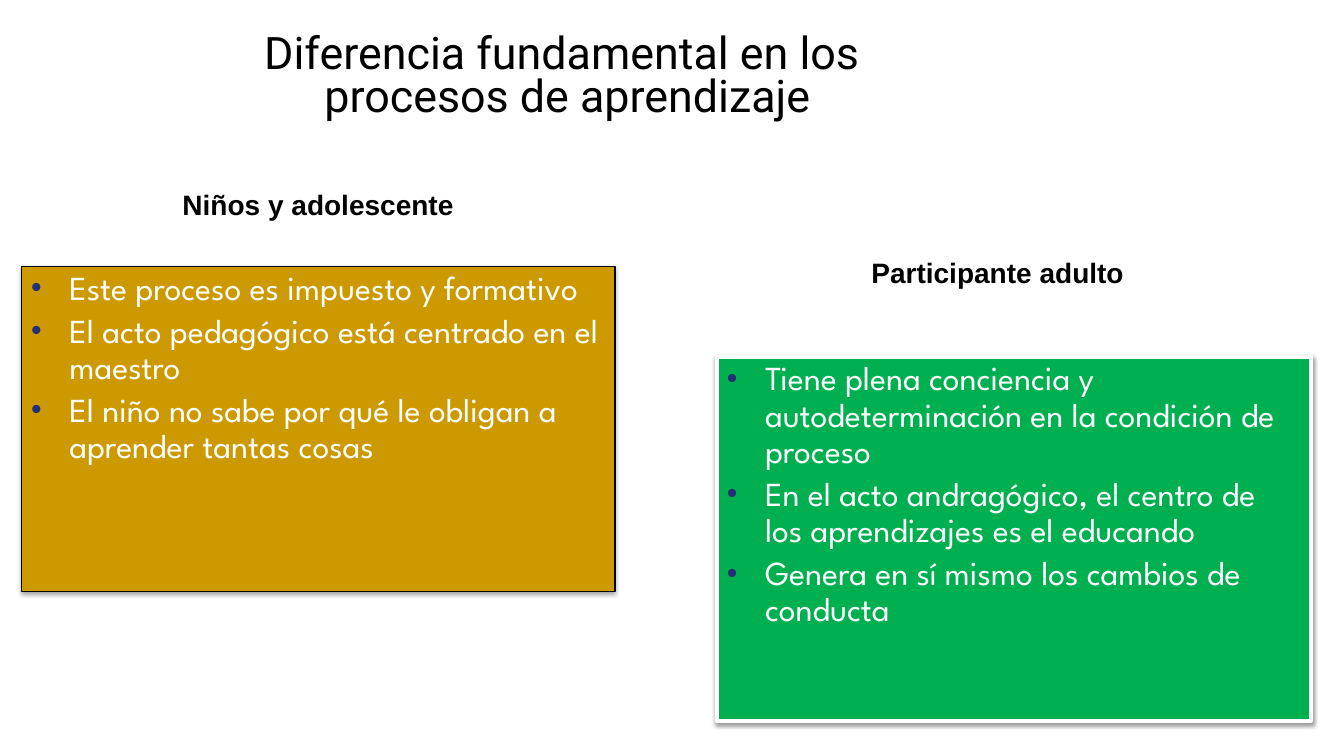
from lxml import etree
from pptx import Presentation
from pptx.dml.color import RGBColor
from pptx.enum.shapes import MSO_SHAPE
from pptx.enum.text import MSO_ANCHOR, PP_ALIGN
from pptx.oxml.ns import qn
from pptx.util import Inches, Pt

RECTANGLE = MSO_SHAPE.RECTANGLE
TOP, MIDDLE, BOTTOM = MSO_ANCHOR.TOP, MSO_ANCHOR.MIDDLE, MSO_ANCHOR.BOTTOM
LEFT, CENTER = PP_ALIGN.LEFT, PP_ALIGN.CENTER

BLACK = RGBColor(0x00, 0x00, 0x00)
WHITE = RGBColor(0xFF, 0xFF, 0xFF)
OCHRE = RGBColor(0xCC, 0x99, 0x00)
GREEN = RGBColor(0x00, 0xB0, 0x50)
NAVY = RGBColor(0x23, 0x30, 0x77)

COLUMN_WIDTH = 5.89
HEADING_HEIGHT = 0.7

CHILD_POINTS = [
    "Este proceso es impuesto y formativo",
    "El acto pedagógico está centrado en el maestro",
    "El niño no sabe por qué le obligan a aprender tantas cosas",
]
ADULT_POINTS = [
    "Tiene plena conciencia y autodeterminación en la condición de proceso",
    "En el acto andragógico, el centro de los aprendizajes es el educando",
    "Genera en sí mismo los cambios de conducta",
]


def add_child(parent, tag, **attributes):
    return etree.SubElement(parent, qn(tag), attributes)


def add_bullet(paragraph):
    """Give a paragraph a hanging navy bullet."""
    properties = paragraph._p.get_or_add_pPr()
    properties.set("marL", str(Inches(0.38)))
    properties.set("indent", str(-Inches(0.38)))
    add_child(add_child(properties, "a:buClr"), "a:srgbClr", val=str(NAVY))
    add_child(properties, "a:buSzPct", val="90000")
    add_child(properties, "a:buFont", typeface="Arial")
    add_child(properties, "a:buChar", char="•")


def write_text(shape, texts, *, font, size, color, bold=False, align=LEFT,
               anchor=TOP, line_spacing=0.9, bullets=False):
    """Fill a shape with one paragraph per text."""
    frame = shape.text_frame
    frame.word_wrap = True
    frame.vertical_anchor = anchor
    for index, text in enumerate(texts):
        paragraph = frame.add_paragraph() if index else frame.paragraphs[0]
        paragraph.text = text
        paragraph.alignment = align
        paragraph.line_spacing = line_spacing
        if index:
            paragraph.space_before = Pt(0.2 * size)
        if bullets:
            add_bullet(paragraph)
        paragraph.font.name = font
        paragraph.font.size = Pt(size)
        paragraph.font.bold = bold
        paragraph.font.color.rgb = color


def add_label(slide, text, left, top, width, height, **text_format):
    label = slide.shapes.add_textbox(
        Inches(left), Inches(top), Inches(width), Inches(height))
    write_text(label, [text], color=BLACK, align=CENTER, **text_format)


def add_heading(slide, text, left, top):
    add_label(slide, text, left, top, COLUMN_WIDTH, HEADING_HEIGHT,
              font="Arial", size=20, bold=True, anchor=BOTTOM)


def add_shadow(shape, opacity, distance):
    """Cast a soft black shadow straight down."""
    shape.shadow.inherit = False
    effects = shape._element.spPr.find(qn("a:effectLst"))
    shadow = add_child(effects, "a:outerShdw", blurRad=str(Pt(3.1)),
                       dist=str(Pt(distance)), dir="5400000", rotWithShape="0")
    color = add_child(shadow, "a:srgbClr", val=str(BLACK))
    add_child(color, "a:alpha", val=str(opacity * 1000))


def add_panel(slide, points, left, top, height, *, fill, line, line_width,
              opacity, distance):
    panel = slide.shapes.add_shape(
        RECTANGLE, Inches(left), Inches(top), Inches(COLUMN_WIDTH), Inches(height))
    panel.fill.solid()
    panel.fill.fore_color.rgb = fill
    panel.line.color.rgb = line
    panel.line.width = Pt(line_width)
    add_shadow(panel, opacity, distance)
    write_text(panel, points, font="League Spartan", size=24, color=WHITE,
               bullets=True)


def main():
    presentation = Presentation()
    presentation.slide_width = Inches(13.33)
    presentation.slide_height = Inches(7.5)
    slide = presentation.slides.add_slide(presentation.slide_layouts[6])

    # Title
    add_label(slide, "Diferencia fundamental en los \vprocesos de aprendizaje",
              -0.37, 0.15, 12, 1.25, font="Roboto", size=32, anchor=MIDDLE,
              line_spacing=0.8)

    # Children and adolescents
    add_heading(slide, "Niños y adolescente", 0.21, 1.55)
    add_panel(slide, CHILD_POINTS, 0.21, 2.64, 3.23, fill=OCHRE, line=BLACK,
              line_width=0.75, opacity=35, distance=1.8)

    # Adult participants
    add_heading(slide, "Participante adulto", 6.95, 2.22)
    add_panel(slide, ADULT_POINTS, 7.11, 3.54, 3.61, fill=GREEN, line=WHITE,
              line_width=3, opacity=38, distance=1.6)

    presentation.save("out.pptx")


if __name__ == "__main__":
    main()
